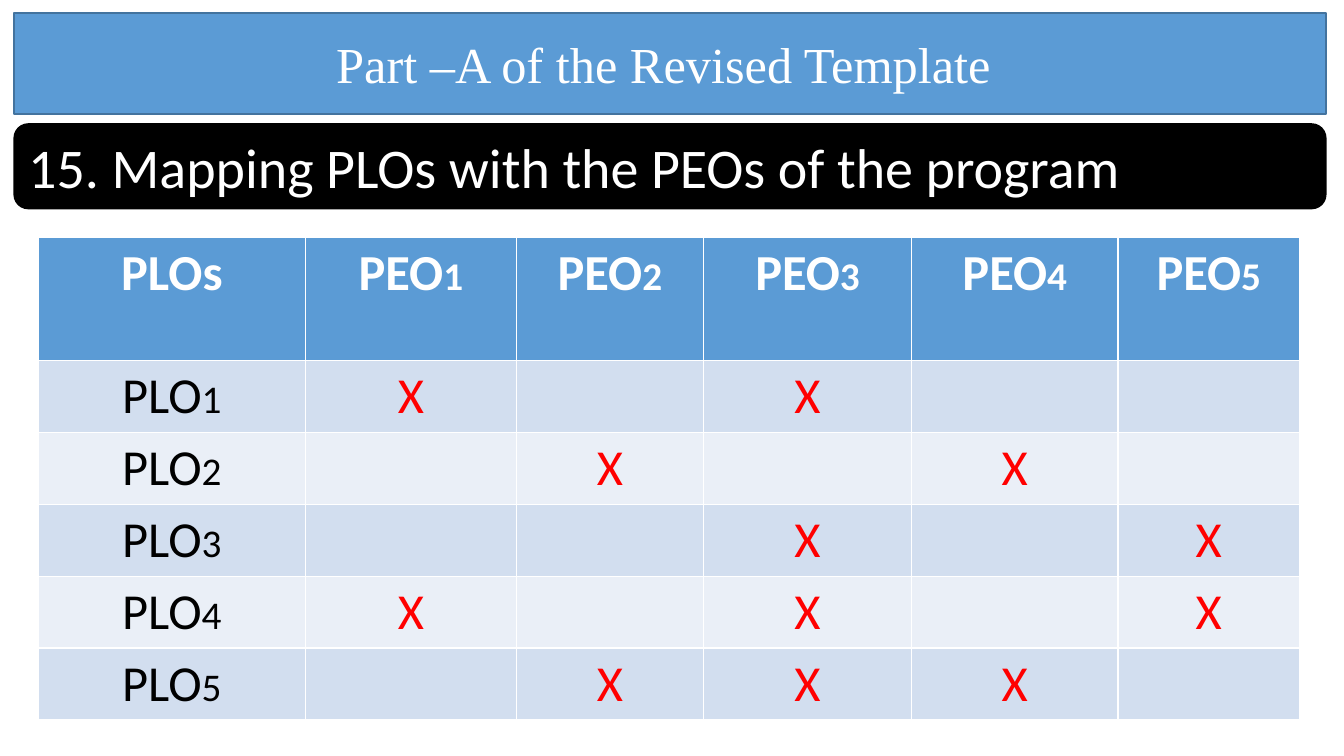
"""Build a slide that maps program outcomes to program objectives."""
import pptx
import pptx.util
import pptx.dml.color
import pptx.enum.shapes
import pptx.enum.text
import pptx.oxml

Inches = pptx.util.Inches
Align = pptx.enum.text.PP_ALIGN
Anchor = pptx.enum.text.MSO_ANCHOR
ROUND = pptx.enum.shapes.MSO_SHAPE.ROUNDED_RECTANGLE

BLUE, WHITE, BLACK, RED = "5B9BD5", "FFFFFF", "000000", "FF0000"
BANDS = ("D2DEEF", "EAEFF7")
WIDTHS = (2.65, 2.09, 1.86, 2.06, 2.05, 1.8)
HEAD, ROW = 1.22, 0.71
LINKS = ((1, 3), (2, 4), (3, 5), (1, 3, 5), (2, 3, 4))


def paint(color, code):
    """Set a color format from a hex string."""
    color.rgb = pptx.dml.color.RGBColor.from_string(code)


def style(run, size, code, face="Calibri", bold=False):
    """Format one run of text."""
    run.font.size = pptx.util.Pt(size)
    run.font.name = face
    run.font.bold = bold
    paint(run.font.color, code)


def place(shape, left, top, width, height):
    """Move and size a shape."""
    shape.left, shape.top = Inches(left), Inches(top)
    shape.width, shape.height = Inches(width), Inches(height)


def curve(title):
    """Give the title placeholder a rounded outline."""
    names = pptx.oxml.ns.nsdecls("a")
    geom = f'<a:prstGeom {names} prst="roundRect"><a:avLst/></a:prstGeom>'
    title.element.spPr.insert(1, pptx.oxml.parse_xml(geom))


def banner(shape, text, size, face, fill, edge, align):
    """Fill a rounded bar and write its text."""
    shape.fill.solid()
    paint(shape.fill.fore_color, fill)
    paint(shape.line.color, edge)
    shape.line.width = pptx.util.Pt(1)
    shape.shadow.inherit = False
    frame = shape.text_frame
    frame.text = text
    frame.word_wrap = True
    frame.auto_size = pptx.enum.text.MSO_AUTO_SIZE.NONE
    frame.vertical_anchor = Anchor.MIDDLE
    para = frame.paragraphs[0]
    para.alignment = align
    style(para.runs[0], size, WHITE, face)


def write(cell, text, digit, code, bold):
    """Write centred cell text with an optional smaller digit."""
    para = cell.text_frame.paragraphs[0]
    para.text = text
    para.alignment = Align.CENTER
    style(para.runs[0], 36, code, bold=bold)
    if digit:
        run = para.add_run()
        run.text = str(digit)
        style(run, 28, code, bold=bold)


def label(cell, row, col):
    """Write the heading or mark that belongs in a cell."""
    if row == 0:
        write(cell, "PEO" if col else "PLOs", col, WHITE, True)
    elif col == 0:
        write(cell, "PLO", row, BLACK, False)
    elif col in LINKS[row - 1]:
        write(cell, "X", 0, RED, False)


def matrix(slide, left, top):
    """Add the table of outcomes against objectives."""
    rows, cols = len(LINKS) + 1, len(WIDTHS)
    frame = slide.shapes.add_table(
        rows, cols, Inches(left), Inches(top),
        Inches(sum(WIDTHS)), Inches(HEAD + ROW * len(LINKS)))
    table = frame.table
    for col, width in enumerate(WIDTHS):
        table.columns[col].width = Inches(width)
    for row in range(rows):
        table.rows[row].height = Inches(ROW if row else HEAD)
        for col in range(cols):
            cell = table.cell(row, col)
            cell.fill.solid()
            paint(cell.fill.fore_color, BANDS[(row - 1) % 2] if row else BLUE)
            label(cell, row, col)


def main():
    """Build and save the slide."""
    deck = pptx.Presentation()
    deck.slide_width, deck.slide_height = Inches(13.33), Inches(7.5)
    slide = deck.slides.add_slide(deck.slide_layouts[5])
    title = slide.shapes.title
    place(title, 0.14, 0.13, 13.01, 1)
    curve(title)
    banner(title, "Part –A of the Revised Template ", 36,
           "Times New Roman", BLUE, "43739E", Align.CENTER)
    topic = slide.shapes.add_shape(
        ROUND, Inches(0.14), Inches(1.23), Inches(13.01), Inches(0.84))
    banner(topic, "15. Mapping PLOs with the PEOs of the program", 40,
           "Calibri", BLACK, BLACK, Align.LEFT)
    matrix(slide, 0.38, 2.36)
    deck.save("out.pptx")


if __name__ == "__main__":
    main()
